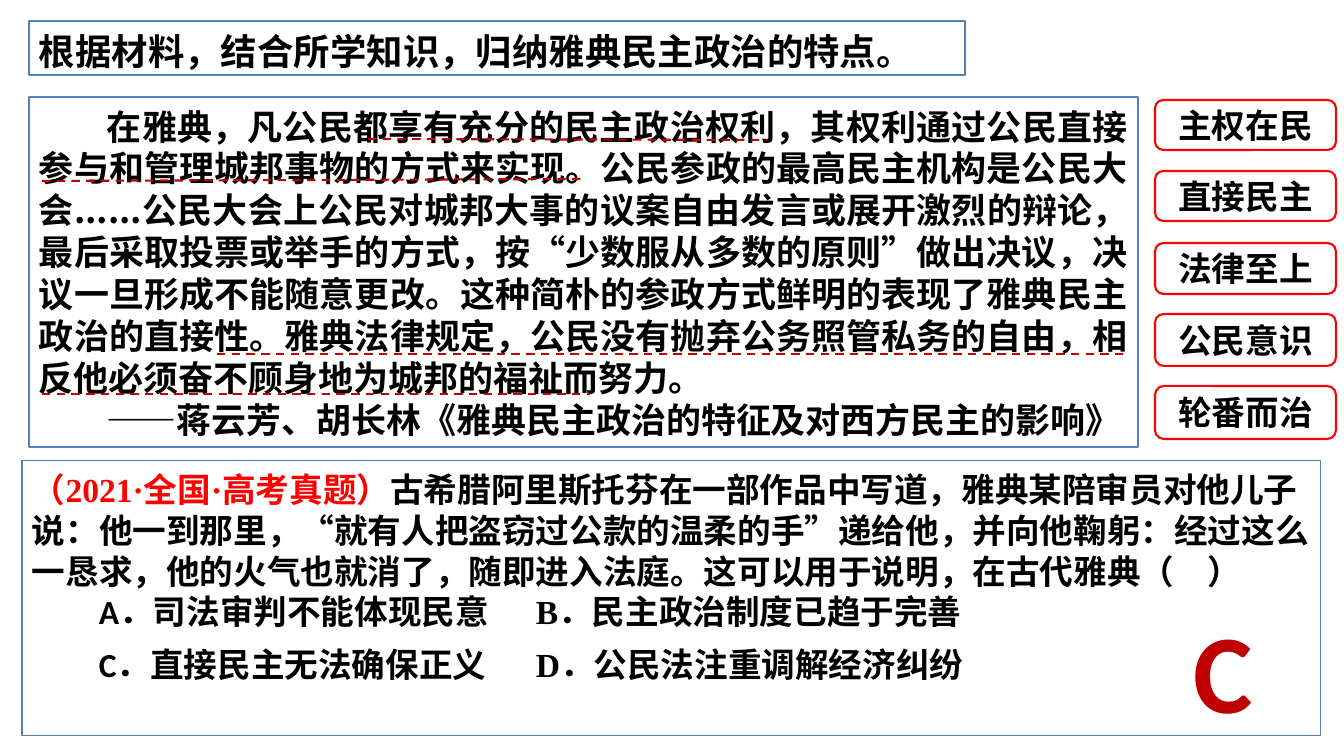
import pptx
import pptx.util
import pptx.dml.color
import pptx.enum.dml
import pptx.enum.shapes
import pptx.enum.text
import pptx.oxml
import pptx.oxml.ns

SHAPE = pptx.enum.shapes.MSO_SHAPE
ALIGN = pptx.enum.text.PP_ALIGN
ANCHOR = pptx.enum.text.MSO_ANCHOR
CJK = "Noto Sans CJK SC"
BLUE, RED, DARK_RED, BLACK, WHITE = "4F81BD", "FF0000", "C00000", "000000", "FFFFFF"


def px(n):
    return pptx.util.Emu(round(n * 914400 / 100.8))


def rgb(value):
    return pptx.dml.color.RGBColor.from_string(value)


def add_text(p, text, size=24, font=CJK, color=BLACK):
    r = p.add_run()
    r.text = text
    r.font.size = pptx.util.Pt(size)
    r.font.bold = True
    r.font.name = font
    r.font.color.rgb = rgb(color)
    ea = pptx.oxml.parse_xml(f'<a:ea {pptx.oxml.ns.nsdecls("a")} typeface="{CJK}"/>')
    r.font._element.find(pptx.oxml.ns.qn("a:latin")).addnext(ea)


class Deck:
    def __init__(self):
        self.prs = pptx.Presentation()
        self.prs.slide_width, self.prs.slide_height = px(1344), px(756)
        self.s = self.prs.slides.add_slide(self.prs.slide_layouts[6])

    def box(self, x, y, w, h, kind=SHAPE.RECTANGLE, line=BLUE, weight=2, fill=None, top=8, bottom=2):
        sp = self.s.shapes.add_shape(kind, px(x), px(y), px(w), px(h))
        sp.shadow.inherit = False
        sp.line.color.rgb = rgb(line)
        sp.line.width = pptx.util.Pt(weight)
        if fill:
            sp.fill.solid()
            sp.fill.fore_color.rgb = rgb(fill)
        else:
            sp.fill.background()
        tf = sp.text_frame
        tf.word_wrap = True
        tf.vertical_anchor = ANCHOR.TOP
        tf.margin_top, tf.margin_bottom = px(top), px(bottom)
        return tf

    def paragraph(self, tf, align=ALIGN.LEFT, leading=None, indent=0, tab=None):
        p = tf.paragraphs[0]
        if p.runs:
            p = tf.add_paragraph()
        p.alignment = align
        if leading:
            p.line_spacing = pptx.util.Pt(leading)
        pr = p._p.get_or_add_pPr()
        pr.set("marL", "0")
        pr.set("indent", str(px(indent)))
        if tab:
            pr.append(pptx.oxml.parse_xml(
                f'<a:tabLst {pptx.oxml.ns.nsdecls("a")}><a:tab pos="{px(tab)}" algn="l"/></a:tabLst>'))
        return p

    def pill(self, text, y, h):
        tf = self.box(1155, y, 181, h, SHAPE.ROUNDED_RECTANGLE, RED, 1.5, top=5, bottom=5)
        tf.vertical_anchor = ANCHOR.MIDDLE
        add_text(self.paragraph(tf, ALIGN.CENTER), text)

    def underline(self, x1, y1, x2, y2):
        c = self.s.shapes.add_connector(
            pptx.enum.shapes.MSO_CONNECTOR.STRAIGHT, px(x1), px(y1), px(x2), px(y2))
        c.line.color.rgb = rgb(DARK_RED)
        c.line.width = pptx.util.Pt(1.5)
        c.line.dash_style = pptx.enum.dml.MSO_LINE.DASH
        c._element.spPr.append(pptx.oxml.parse_xml(f'<a:effectLst {pptx.oxml.ns.nsdecls("a")}/>'))

    def answer(self, text, x, y, w, h):
        tf = self.s.shapes.add_textbox(px(x), px(y), px(w), px(h)).text_frame
        tf.word_wrap = False
        add_text(self.paragraph(tf, ALIGN.CENTER), text, size=80, font="Calibri", color=DARK_RED)


def main():
    deck = Deck()

    material = deck.box(29, 97, 1109, 350, fill=WHITE)
    for text in (
        "在雅典，凡公民都享有充分的民主政治权利，其权利通过公民直接参与和管理城邦事物的方式来实现。"
        "公民参政的最高民主机构是公民大会......公民大会上公民对城邦大事的议案自由发言或展开激烈的辩论，"
        "最后采取投票或举手的方式，按“少数服从多数的原则”做出决议，决议一旦形成不能随意更改。"
        "这种简朴的参政方式鲜明的表现了雅典民主政治的直接性。雅典法律规定，"
        "公民没有抛弃公务照管私务的自由，相反他必须奋不顾身地为城邦的福祉而努力。",
        "——蒋云芳、胡长林《雅典民主政治的特征及对西方民主的影响》",
    ):
        add_text(deck.paragraph(material, ALIGN.JUSTIFY, 30, 68), text, size=25)

    title = deck.box(29, 21, 936, 54, fill=WHITE)
    add_text(deck.paragraph(title, leading=31), "根据材料，结合所学知识，归纳雅典民主政治的特点。", size=26)

    for ends in ((368, 139, 767, 140), (42, 181, 583, 179), (217, 354, 1125, 354), (42, 394, 590, 394)):
        deck.underline(*ends)

    features = ("主权在民", "直接民主", "法律至上", "公民意识", "轮番而治")
    for i, (text, h) in enumerate(zip(features, (50, 50, 51, 52, 53))):
        deck.pill(text, 100 + i * 143 // 2, h)

    question = deck.box(22, 461, 1299, 275, weight=0.75)
    p = deck.paragraph(question, leading=29)
    for text, font in (
        ("（", "Calibri"),
        ("2021·", "Times New Roman"),
        ("全国", "Calibri"),
        ("·", "Times New Roman"),
        ("高考真题）", "Calibri"),
    ):
        add_text(p, text, font=font, color=RED)
    add_text(
        p,
        "古希腊阿里斯托芬在一部作品中写道，雅典某陪审员对他儿子说：他一到那里，"
        "“就有人把盗窃过公款的温柔的手”递给他，并向他鞠躬：经过这么一恳求，他的火气也就消了，"
        "随即进入法庭。这可以用于说明，在古代雅典（　）",
        font="Calibri",
    )
    for leading, left, left_text, right, right_text in (
        (29, "A", "．司法审判不能体现民意", "B", "．民主政治制度已趋于完善"),
        (37.5, "C", "．直接民主无法确保正义", "D", "．公民法注重调解经济纠纷"),
    ):
        p = deck.paragraph(question, leading=leading, indent=67, tab=656)
        add_text(p, left + left_text + "\t", font="Calibri")
        add_text(p, right, font="Times New Roman")
        add_text(p, right_text, font="Calibri")

    deck.answer("C", 1183, 597, 80, 146)
    deck.prs.save("out.pptx")


if __name__ == "__main__":
    main()
